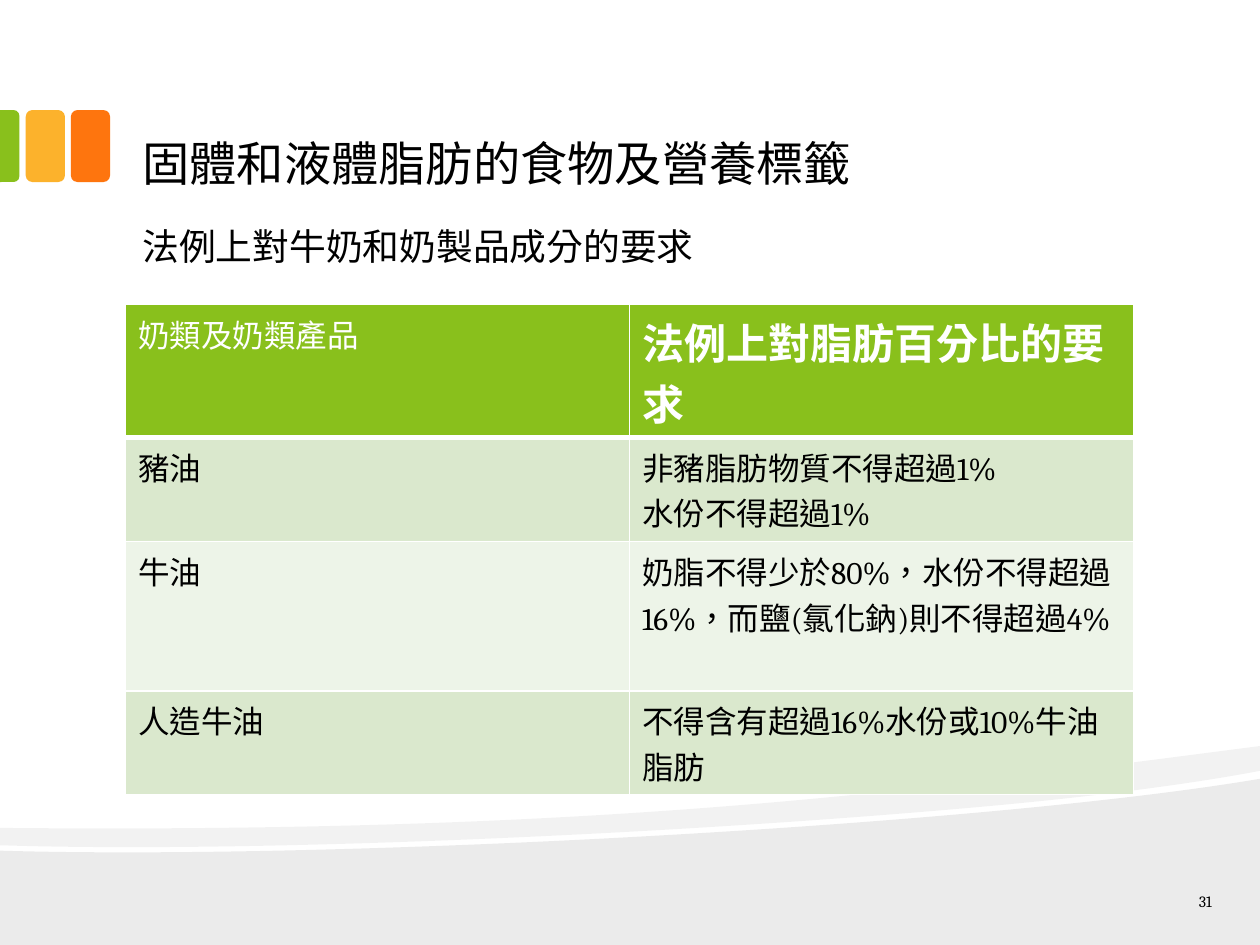
from typing import NamedTuple

from lxml import etree
from pptx import Presentation, util as u
from pptx.dml.color import RGBColor
from pptx.enum import lang, shapes, text
from pptx.oxml.ns import qn

FONT = "Cambria"
BLACK, WHITE, GREEN = "000000", "FFFFFF", "89C01C"


class Wave(NamedTuple):
    """Outline in cm: a segment of one point is a line, of three a Bézier curve."""
    start: tuple
    segments: list
    opacity: int


class Tab(NamedTuple):
    left: float
    width: float
    preset: int
    colour: str


class Caption(NamedTuple):
    words: str
    box: tuple
    size: float
    anchor: int = text.MSO_ANCHOR.TOP
    align: int = text.PP_ALIGN.LEFT
    line_spacing: float = 1.0
    space_before: float = 0


class Row(NamedTuple):
    product: str
    rule: str
    height: float
    fill: str
    colour: str = BLACK
    rule_size: float = 18
    rule_bold: bool = False


WAVES = [
    Wave((25.4, 15.7), [
        [(25.4, 19.05)],
        [(0, 19.05)],
        [(0, 17.15)],
        [(6.71, 17.35), (19.86, 16.64), (25.4, 15.7)],
    ], 8),
    Wave((25.4, 15.04), [
        [(25.4, 15.54)],
        [(23.93, 15.82), (21.89, 16.08), (19.61, 16.28)],
        [(13.28, 16.84), (4.9, 17.2), (0, 17.04)],
        [(0, 16.69)],
        [(12.42, 16.81), (18.49, 15.93), (25.4, 15.04)],
    ], 5),
]

TABS = [
    Tab(1.43, 0.79, shapes.MSO_SHAPE.ROUNDED_RECTANGLE, "FE750E"),
    Tab(0.52, 0.79, shapes.MSO_SHAPE.ROUNDED_RECTANGLE, "FCB22C"),
    Tab(0, 0.39, shapes.MSO_SHAPE.ROUND_2_SAME_RECTANGLE, GREEN),
]

CAPTIONS = [
    Caption("固體和液體脂肪的食物及營養標籤", (2.54, 0.43, 20.32, 3.61), 27,
            anchor=text.MSO_ANCHOR.BOTTOM),
    Caption("法例上對牛奶和奶製品成分的要求", (2.54, 4.43, 20.32, 12.7), 21,
            line_spacing=0.9, space_before=13.5),
    Caption("31", (23.06, 17.91, 1.7, 0.51), 9,
            anchor=text.MSO_ANCHOR.MIDDLE, align=text.PP_ALIGN.RIGHT),
]

ROWS = [
    Row("奶類及奶類產品", "法例上對脂肪百分比的要求", 2.68, GREEN, WHITE, 24, True),
    Row("豬油", "非豬脂肪物質不得超過1%\n水份不得超過1%", 2.1, "DAE8CD"),
    Row("牛油", "奶脂不得少於80%，水份不得超過16%，而鹽(氯化鈉)則不得超過4%", 3.01, "EDF4E8"),
    Row("人造牛油", "不得含有超過16%水份或10%牛油脂肪", 2.09, "DAE8CD"),
]


def paint(fill, colour: str) -> None:
    fill.solid()
    fill.fore_color.rgb = RGBColor.from_string(colour)


def style_para(para, size: float, colour: str, bold: bool = False) -> None:
    font = para.font
    font.name, font.size, font.bold = FONT, u.Pt(size), bold
    paint(font.fill, colour)
    for span in para.runs:
        span.font.language_id = lang.MSO_LANGUAGE_ID.TRADITIONAL_CHINESE


def bend_segments(shape, segments: list) -> None:
    """Turn the lines of each three-point segment into one Bézier curve."""
    lines = iter(list(shape._element.iter(qn("a:lnTo"))))
    for segment in segments:
        parts = [next(lines) for _ in segment]
        if len(parts) == 3:
            curve = etree.Element(qn("a:cubicBezTo"))
            parts[0].addprevious(curve)
            for part in parts:
                curve.append(part[0])
                part.getparent().remove(part)


def draw_wave(page, wave: Wave) -> None:
    builder = page.shapes.build_freeform(*map(u.Cm, wave.start))
    points = [point for segment in wave.segments for point in segment]
    builder.add_line_segments([(u.Cm(x), u.Cm(y)) for x, y in points], close=True)
    shape = builder.convert_to_shape()
    bend_segments(shape, wave.segments)
    shape.shadow.inherit = False
    shape.line.fill.background()
    paint(shape.fill, BLACK)
    colour = shape.fill._xPr.find(qn("a:solidFill"))[0]
    etree.SubElement(colour, qn("a:alpha"), val=str(wave.opacity * 1000))


def draw_tab(page, tab: Tab) -> None:
    top, height = 2.22, 1.45
    turned = tab.preset == shapes.MSO_SHAPE.ROUND_2_SAME_RECTANGLE
    width, length = (height, tab.width) if turned else (tab.width, height)
    left = tab.left + (tab.width - width) / 2
    shape = page.shapes.add_shape(tab.preset, u.Cm(left), u.Cm(top + (height - length) / 2),
                                  u.Cm(width), u.Cm(length))
    if turned:
        shape.rotation = 90
        shape.adjustments[0] = 0.29
    shape.shadow.inherit = False
    shape.line.fill.background()
    paint(shape.fill, tab.colour)


def draw_caption(page, caption: Caption) -> None:
    frame = page.shapes.add_textbox(*map(u.Cm, caption.box)).text_frame
    frame.word_wrap = True
    frame.vertical_anchor = caption.anchor
    frame.margin_left = frame.margin_right = u.Cm(0.33)
    frame.margin_top = frame.margin_bottom = u.Cm(0.18)
    para = frame.paragraphs[0]
    para.text, para.alignment = caption.words, caption.align
    para.line_spacing = caption.line_spacing
    para.space_before = u.Pt(caption.space_before)
    style_para(para, caption.size, BLACK)


def set_borders(cell, bottom: float) -> None:
    """Draw white cell edges; the bottom width is in points."""
    properties = cell._tc.get_or_add_tcPr()
    for index, (side, width) in enumerate(
            [("lnL", 1), ("lnR", 1), ("lnT", 1), ("lnB", bottom)]):
        line = etree.Element(qn(f"a:{side}"), w=str(u.Pt(width)))
        fill = etree.SubElement(line, qn("a:solidFill"))
        etree.SubElement(fill, qn("a:srgbClr"), val=WHITE)
        properties.insert(index, line)


def fill_cell(cell, words: str, row: Row, size: float, bold: bool) -> None:
    cell.text = words
    for para in cell.text_frame.paragraphs:
        style_para(para, size, row.colour, bold)
    paint(cell.fill, row.fill)
    set_borders(cell, 3 if row.fill == GREEN else 1)


def draw_table(page, rows: list) -> None:
    height = sum(row.height for row in rows)
    table = page.shapes.add_table(len(rows), 2, u.Cm(2.53), u.Cm(6.14),
                                  u.Cm(20.32), u.Cm(height)).table
    for index, row in enumerate(rows):
        table.rows[index].height = u.Cm(row.height)
        fill_cell(table.cell(index, 0), row.product, row, 18, False)
        fill_cell(table.cell(index, 1), row.rule, row, row.rule_size, row.rule_bold)


def main() -> None:
    deck = Presentation()
    deck.slide_width, deck.slide_height = u.Cm(25.4), u.Cm(19.05)
    page = deck.slides.add_slide(deck.slide_layouts[6])
    for wave in WAVES:
        draw_wave(page, wave)
    for tab in TABS:
        draw_tab(page, tab)
    for caption in CAPTIONS:
        draw_caption(page, caption)
    draw_table(page, ROWS)
    deck.save("out.pptx")


if __name__ == "__main__":
    main()
